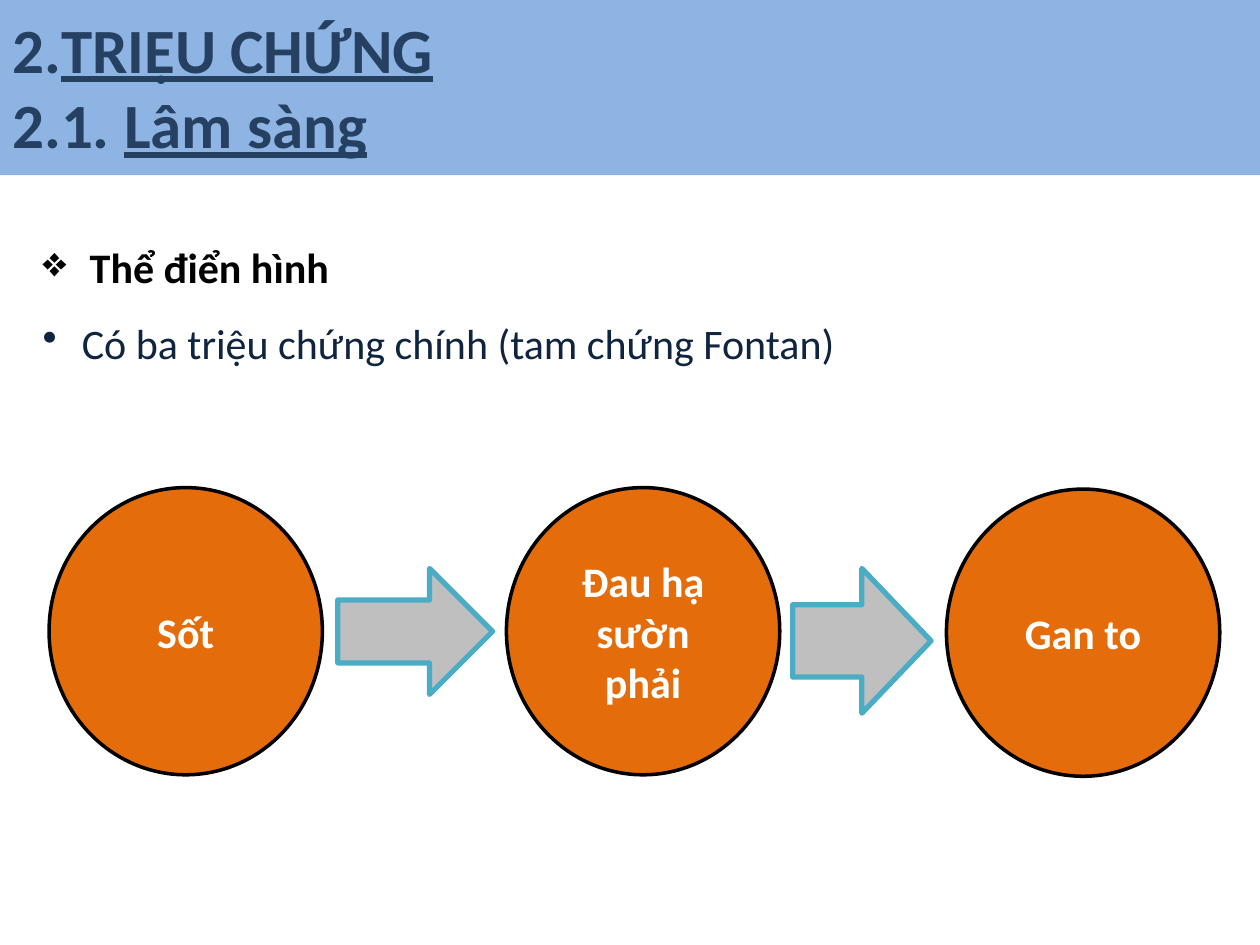
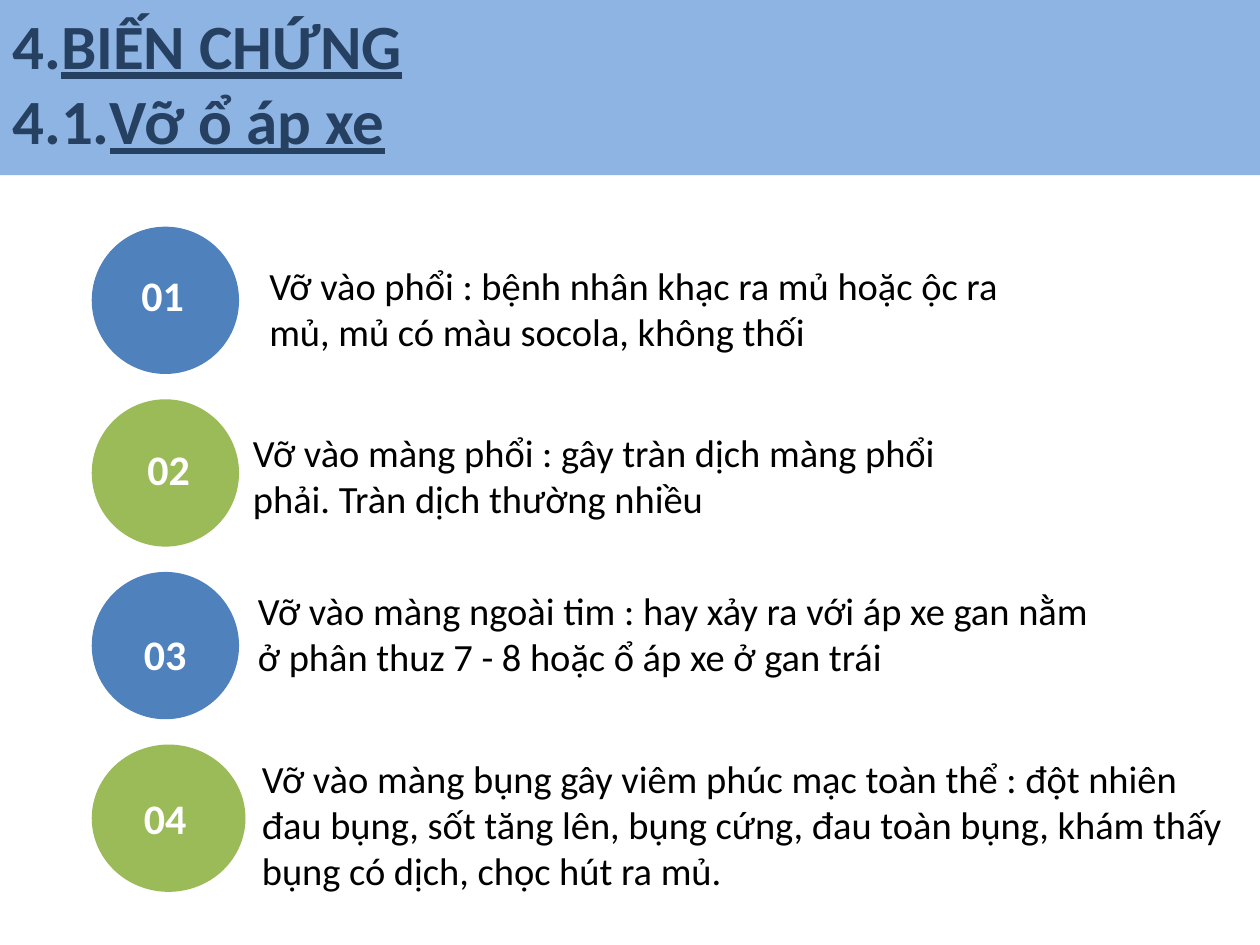
from dataclasses import dataclass

from lxml.etree import SubElement
from pptx import Presentation
from pptx.dml.color import RGBColor
from pptx.enum.shapes import MSO_SHAPE
from pptx.enum.text import MSO_ANCHOR, MSO_AUTO_SIZE, PP_ALIGN
from pptx.oxml.ns import qn
from pptx.util import Cm, Pt


@dataclass(frozen=True)
class Theme:
    font: str = "Calibri"
    band: str = "8EB4E3"
    heading: str = "254061"
    symptom: str = "E46C0A"
    arrow: str = "BFBFBF"
    arrow_edge: str = "4BACC6"
    blue: str = "4F81BD"
    green: str = "9BBB59"
    navy: str = "0F243E"
    black: str = "000000"
    white: str = "FFFFFF"
    heading_size: int = 36
    label_size: int = 24
    body_size: int = 22


THEME = Theme()
SLIDE_WIDTH, SLIDE_HEIGHT = 25.4, 19.05
BAND_HEIGHT = 3.53


def apply_format(target, values):
    for attribute, value in values.items():
        setattr(target, attribute, value)


def add_words(paragraph, words, size, color, **extra):
    run = paragraph.add_run()
    run.text = words
    apply_format(run.font, {"name": THEME.font, "size": Pt(size), **extra})
    run.font.color.rgb = RGBColor.from_string(color)


def add_figure(slide, kind, box, fill, edge=None, edge_width=0):
    figure = slide.shapes.add_shape(kind, *map(Cm, box))
    figure.shadow.inherit = False
    figure.fill.solid()
    figure.fill.fore_color.rgb = RGBColor.from_string(fill)
    if edge:
        figure.line.color.rgb = RGBColor.from_string(edge)
        figure.line.width = Pt(edge_width)
    else:
        figure.line.fill.background()
    return figure


def add_frame(slide, box):
    frame = slide.shapes.add_textbox(*map(Cm, box)).text_frame
    apply_format(frame, {"word_wrap": True, "auto_size": MSO_AUTO_SIZE.SHAPE_TO_FIT_TEXT})
    return frame


def add_note(slide, box, words, size, color, align=PP_ALIGN.LEFT, bold=False):
    paragraph = add_frame(slide, box).paragraphs[0]
    paragraph.alignment = align
    add_words(paragraph, words, size, color, bold=bold)


def add_band(slide):
    return add_figure(slide, MSO_SHAPE.RECTANGLE, (0, 0, SLIDE_WIDTH, BAND_HEIGHT), THEME.band)


def write_heading(frame, entries):
    frame.vertical_anchor = MSO_ANCHOR.TOP
    for index, (number, title) in enumerate(entries):
        paragraph = frame.add_paragraph() if index else frame.paragraphs[0]
        paragraph.alignment = PP_ALIGN.LEFT
        for words, underline in ((number, False), (title, True)):
            add_words(paragraph, words, THEME.heading_size, THEME.heading,
                      bold=True, underline=underline)


def add_bullets(slide, box, entries):
    frame = add_frame(slide, box)
    for index, (mark, indent, words, color, bold) in enumerate(entries):
        paragraph = frame.add_paragraph() if index else frame.paragraphs[0]
        paragraph.line_spacing = 1.5
        properties = paragraph._p.get_or_add_pPr()
        properties.set("marL", str(Cm(indent)))
        properties.set("indent", str(-Cm(indent)))
        SubElement(properties, qn("a:buChar")).set("char", mark)
        add_words(paragraph, words, THEME.label_size, color, bold=bold)


def add_symptom(slide, left, top, words):
    symptom = add_figure(slide, MSO_SHAPE.OVAL, (left, top, 5.51, 5.79),
                         THEME.symptom, THEME.black, 2)
    apply_format(symptom.text_frame, {"word_wrap": True, "vertical_anchor": MSO_ANCHOR.MIDDLE})
    paragraph = symptom.text_frame.paragraphs[0]
    paragraph.alignment = PP_ALIGN.CENTER
    add_words(paragraph, words, THEME.label_size, THEME.white, bold=True)


def build_symptoms(slide):
    add_band(slide)
    for left, top, words in ((0.99, 9.83, "Sốt"),
                             (10.21, 9.83, "Đau hạ sườn phải"),
                             (19.08, 9.86, "Gan to")):
        add_symptom(slide, left, top, words)
    for box in ((6.81, 11.46, 3.12, 2.54), (15.98, 11.46, 2.79, 2.92)):
        add_figure(slide, MSO_SHAPE.RIGHT_ARROW, box, THEME.arrow, THEME.arrow_edge, 3)
    add_bullets(slide, (0.61, 4.24, 17.15, 3.18), (
        ("❖", 0.95, "Thể điển hình", THEME.black, True),
        ("•", 0.79, "Có ba triệu chứng chính (tam chứng Fontan)", THEME.navy, False),
    ))
    write_heading(add_frame(slide, (0, 0.08, 10.59, 3.38)),
                  (("2.", "TRIỆU CHỨNG"), ("2.1. ", "Lâm sàng")))


def build_complications(slide):
    write_heading(add_band(slide).text_frame,
                  (("4.", "BIẾN CHỨNG"), ("4.1.", "Vỡ ổ áp xe")))
    complications = (
        (2.97, (2.39, 5.31), (5.18, 5.16, 16.56, 2.13),
         "Vỡ vào phổi : bệnh nhân khạc ra mủ hoặc ộc ra mủ, mủ có màu socola, không thối"),
        (2.97, (2.51, 8.81), (4.85, 8.53, 15.72, 2.13),
         "Vỡ vào màng phổi : gây tràn dịch màng phổi phải. Tràn dịch thường nhiều"),
        (2.97, (2.44, 12.55), (4.95, 11.71, 17.55, 2.13),
         "Vỡ vào màng ngoài tim : hay xảy ra với áp xe gan nằm ở phân thuz 7 - 8 "
         "hoặc ổ áp xe ở gan trái"),
        (3.1, (2.44, 15.85), (5.03, 15.09, 19.86, 3.07),
         "Vỡ vào màng bụng gây viêm phúc mạc toàn thể : đột nhiên đau bụng, sốt tăng lên, "
         "bụng cứng, đau toàn bụng, khám thấy bụng có dịch, chọc hút ra mủ."),
    )
    for index, (disc_width, number_corner, box, words) in enumerate(complications):
        disc = (1.85, 4.57 + 3.48 * index, disc_width, 2.97)
        add_figure(slide, MSO_SHAPE.OVAL, disc, (THEME.blue, THEME.green)[index % 2])
        add_note(slide, (*number_corner, 1.78, 1.27), f"{index + 1:02}",
                 THEME.label_size, THEME.white, PP_ALIGN.CENTER, True)
        add_note(slide, box, words, THEME.body_size, THEME.black)


def main():
    deck = Presentation()
    apply_format(deck, {"slide_width": Cm(SLIDE_WIDTH), "slide_height": Cm(SLIDE_HEIGHT)})
    for build in (build_symptoms, build_complications):
        build(deck.slides.add_slide(deck.slide_layouts[6]))
    deck.save("out.pptx")


if __name__ == "__main__":
    main()
